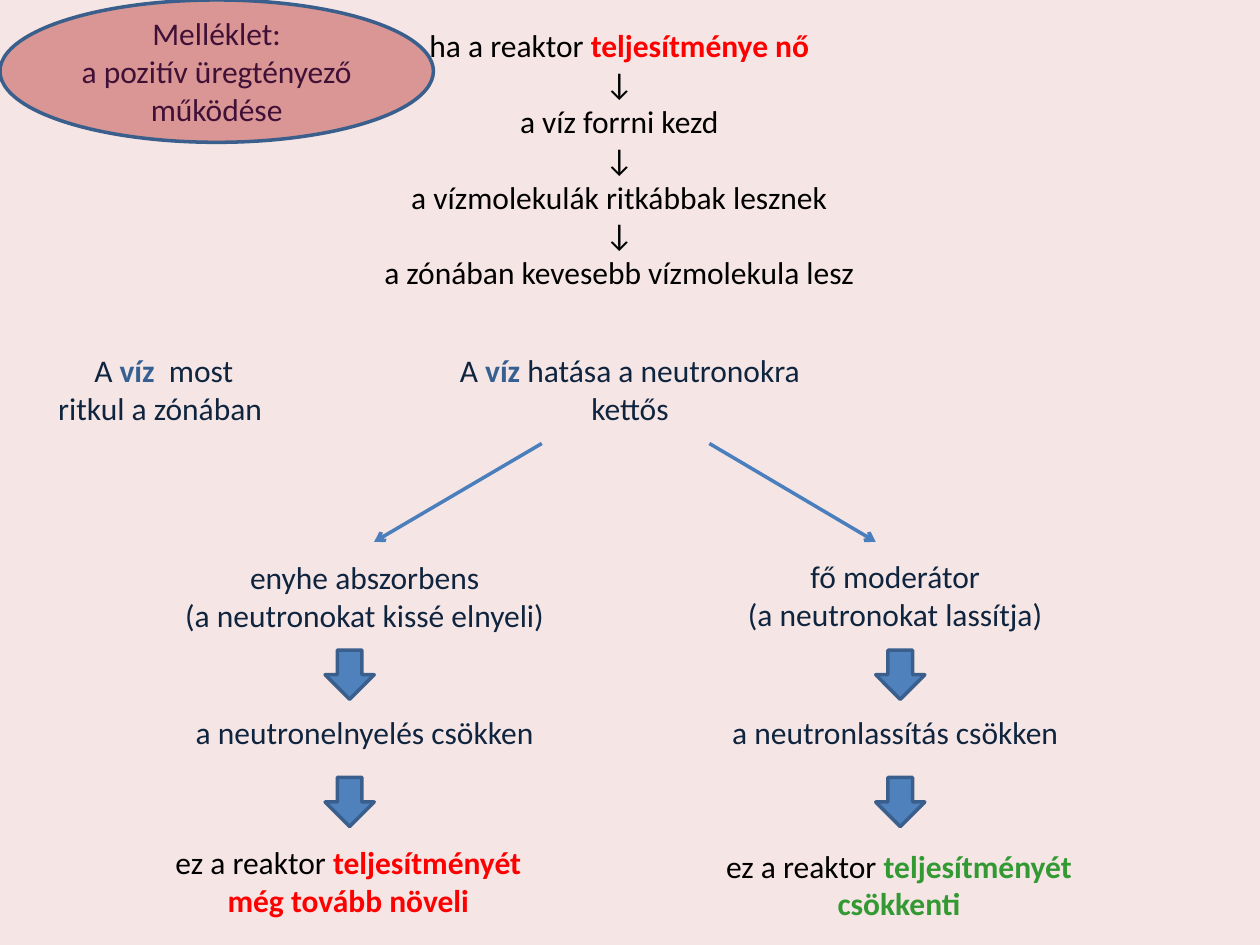
from lxml import etree
from pptx import Presentation
from pptx.dml.color import RGBColor
from pptx.enum.shapes import MSO_CONNECTOR, MSO_SHAPE
from pptx.enum.text import MSO_ANCHOR, MSO_AUTO_SIZE, PP_ALIGN
from pptx.oxml.ns import qn
from pptx.util import Inches, Pt

STRAIGHT = MSO_CONNECTOR.STRAIGHT
DOWN_ARROW = MSO_SHAPE.DOWN_ARROW
OVAL = MSO_SHAPE.OVAL
MIDDLE = MSO_ANCHOR.MIDDLE
GROW = MSO_AUTO_SIZE.SHAPE_TO_FIT_TEXT
CENTER = PP_ALIGN.CENTER

BACKGROUND = RGBColor(0xF5, 0xE5, 0xE4)
BLACK = RGBColor(0, 0, 0)
NAVY = RGBColor(0x0F, 0x24, 0x3E)
WATER = RGBColor(0x37, 0x60, 0x92)
RED = RGBColor(0xFF, 0, 0)
GREEN = RGBColor(0x33, 0x99, 0x33)
BLUE = RGBColor(0x4F, 0x81, 0xBD)
OUTLINE = RGBColor(0x3A, 0x5F, 0x8C)
ARROW_LINE = RGBColor(0x4B, 0x7E, 0xBC)
ROSE = RGBColor(0xD9, 0x96, 0x94)
PLUM = RGBColor(0x40, 0x10, 0x37)


class FlowSlide:
    """Draws the elements of a flow diagram on one page in a shared style."""

    def __init__(self, page, font="Calibri", size=18, line_width=2):
        self.page = page
        self.font = font
        self.size = Pt(size)
        self.line_width = Pt(line_width)
        page.background.fill.solid()
        page.background.fill.fore_color.rgb = BACKGROUND

    def add_paras(self, frame, paras):
        for index, spans in enumerate(paras):
            para = frame.paragraphs[0] if index == 0 else frame.add_paragraph()
            para.alignment = CENTER
            for text, color, bold in spans:
                for number, line in enumerate(text.split("\n")):
                    if number:
                        para.add_line_break()
                    span = para.add_run()
                    span.text = line
                    span.font.name = self.font
                    span.font.size = self.size
                    span.font.bold = bold
                    span.font.color.rgb = color

    def text(self, left, top, width, height, paras, wrap=True):
        box = self.page.shapes.add_textbox(
            Inches(left), Inches(top), Inches(width), Inches(height))
        box.text_frame.word_wrap = wrap
        box.text_frame.auto_size = GROW
        self.add_paras(box.text_frame, paras)

    def shape(self, kind, left, top, width, height, fill):
        shape = self.page.shapes.add_shape(
            kind, Inches(left), Inches(top), Inches(width), Inches(height))
        shape.shadow.inherit = False
        shape.fill.solid()
        shape.fill.fore_color.rgb = fill
        shape.line.color.rgb = OUTLINE
        shape.line.width = self.line_width
        return shape

    def label(self, left, top, width, height, text):
        oval = self.shape(OVAL, left, top, width, height, ROSE)
        oval.text_frame.word_wrap = True
        oval.text_frame.vertical_anchor = MIDDLE
        self.add_paras(oval.text_frame, [[(text, PLUM, False)]])

    def arrow(self, start, end):
        points = [Inches(value) for value in (*start, *end)]
        connector = self.page.shapes.add_connector(STRAIGHT, *points)
        connector.line.color.rgb = ARROW_LINE
        connector.line.width = self.line_width
        properties = connector._element.spPr
        outline = properties.find(qn("a:ln"))
        etree.SubElement(outline, qn("a:tailEnd"), type="arrow")
        etree.SubElement(properties, qn("a:effectLst"))


def plain(color, *lines):
    return [[(line, color, False)] for line in lines]


def main():
    deck = Presentation()
    deck.slide_width, deck.slide_height = Inches(10), Inches(7.5)
    flow = FlowSlide(deck.slides.add_slide(deck.slide_layouts[6]))

    steps = plain(BLACK, "↓", "a víz forrni kezd", "↓",
                  "a vízmolekulák ritkábbak lesznek", "↓",
                  "a zónában kevesebb vízmolekula lesz")
    cause = [("ha a reaktor ", BLACK, False), ("teljesítménye nő", RED, True)]
    flow.text(0.62, 0.16, 8.59, 2.22, [cause] + steps)

    effect = [("A ", NAVY, False), ("víz", WATER, True),
              (" hatása a neutronokra", NAVY, False)]
    flow.text(0, 2.74, 10, 0.71, [effect] + plain(NAVY, "kettős"))
    thinning = [("A ", NAVY, False), ("víz ", WATER, True),
                (" most\nritkul a zónában ", NAVY, False)]
    flow.text(0.35, 2.74, 1.9, 0.71, [thinning], wrap=False)

    branches = [
        (1.33, 3.13, 4.38, 2.58, 4.3, 2.97, 1.28, 6.64, RED,
         ("enyhe abszorbens", "(a neutronokat kissé elnyeli)"),
         "a neutronelnyelés csökken", "még tovább növeli"),
        (5.7, 2.81, 4.37, 6.95, 5.63, 6.95, 5.65, 6.67, GREEN,
         ("fő moderátor", "(a neutronokat lassítja)"),
         "a neutronlassítás csökken", "csökkenti"),
    ]
    for (left, width, role_top, arrow_left, start, end, result_left,
         result_top, color, role, change, result) in branches:
        flow.arrow((start, 3.52), (end, 4.3))
        flow.text(left, role_top, width, 0.71, plain(NAVY, *role))
        flow.text(left, 5.61, width, 0.4, plain(NAVY, change))
        for top in (5.16, 6.17):
            flow.shape(DOWN_ARROW, arrow_left, top, 0.39, 0.39, BLUE)
        outcome = [("ez a reaktor ", BLACK, False), ("teljesítményét", color, True)]
        flow.text(result_left, result_top, 2.97, 0.71,
                  [outcome, [(result, color, True)]], wrap=False)

    flow.label(0, 0, 3.44, 1.13, "Melléklet:\na pozitív üregtényező\nműködése")
    deck.save("out.pptx")


if __name__ == "__main__":
    main()
